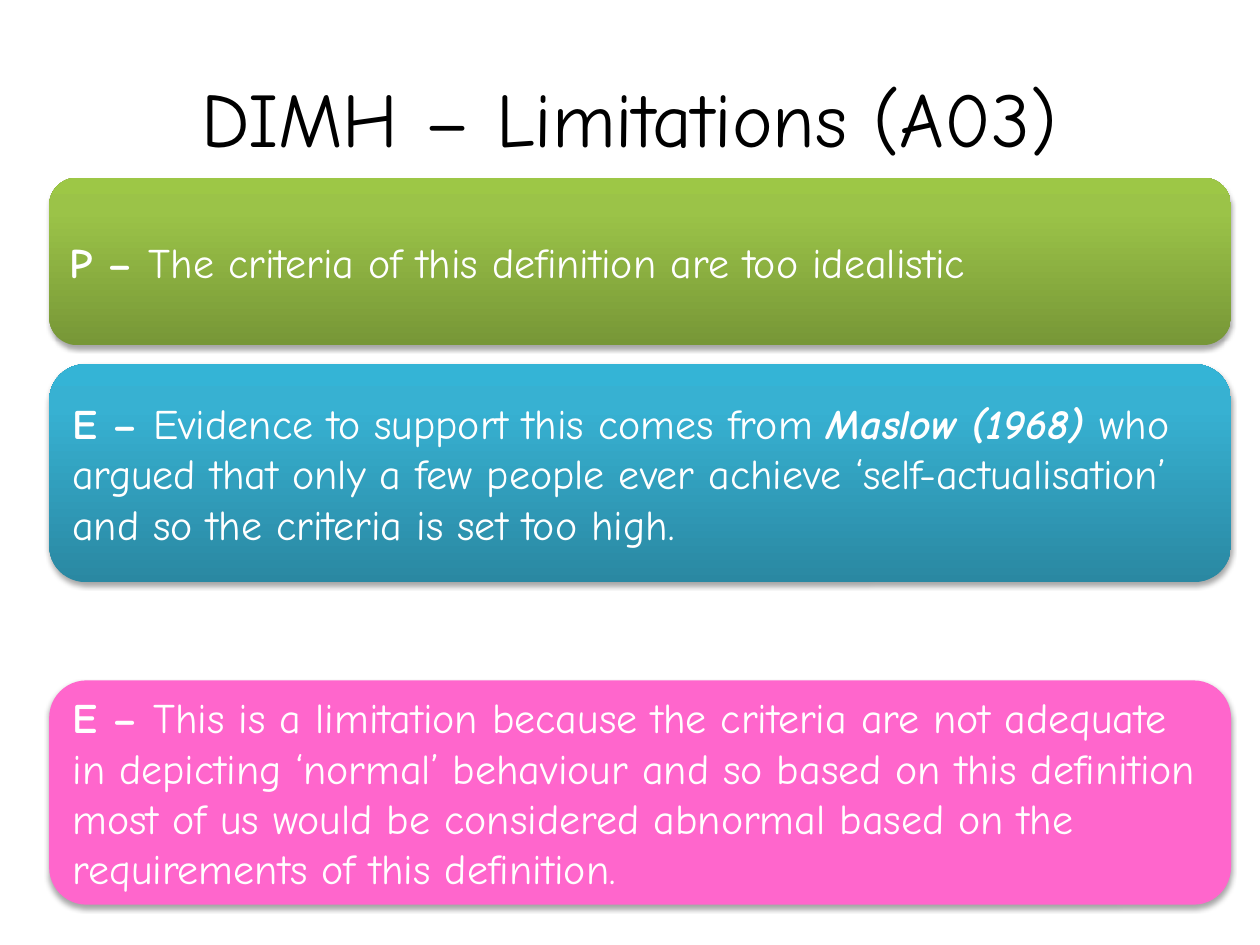
from copy import deepcopy

from lxml.etree import SubElement
from pptx import Presentation
from pptx.dml.color import RGBColor
from pptx.enum.shapes import MSO_SHAPE
from pptx.enum.text import MSO_ANCHOR, PP_ALIGN
from pptx.oxml.ns import qn
from pptx.util import Inches, Pt

FONT = "Comic Neue"
GREEN = [(0, "779737"), (0.8, "9BC348"), (1, "9DC746")]
BLUE = [(0, "2A88A2"), (0.8, "37B1D2"), (1, "34B4D6")]
PINK = [(0, "FF66CC")]

CARDS = [
    (1.41, 1.33, GREEN, [
        ("P – ", True, False),
        ("The criteria of this definition are too idealistic", False, False),
    ]),
    (2.89, 1.73, BLUE, [
        ("E – ", True, False),
        ("Evidence to support this comes from ", False, False),
        ("Maslow (1968) ", True, True),
        ("who argued that only a few people ever achieve ‘self-actualisation’ "
         "and so the criteria is set too high.", False, False),
    ]),
    (5.4, 1.78, PINK, [
        ("E – ", True, False),
        ("This is a limitation because the criteria are not adequate in depicting "
         "‘normal’ behaviour and so based on this definition most of us would be "
         "considered abnormal based on the requirements of this definition.", False, False),
    ]),
]


def color(value):
    """Return the colour for a hex string."""
    return RGBColor.from_string(value)


def format_font(font, size, value, bold=False, italic=False):
    """Set typeface, size, colour and style of a font."""
    font.name = FONT
    font.size = Pt(size)
    font.color.rgb = color(value)
    font.bold = bold
    font.italic = italic


def fill_shape(shape, stops):
    """Fill a shape with one colour, or with a gradient rising from the bottom."""
    if len(stops) == 1:
        shape.fill.solid()
        shape.fill.fore_color.rgb = color(stops[0][1])
        return
    shape.fill.gradient()
    shape.fill.gradient_angle = 90
    stop_list = shape._element.spPr.find(".//" + qn("a:gsLst"))
    while len(stop_list) < len(stops):
        stop_list.append(deepcopy(stop_list[0]))
    for stop, (position, value) in zip(shape.fill.gradient_stops, stops):
        stop.color.rgb = color(value)
        stop.position = position


def add_soft_shadow(shape):
    """Give a shape a soft black shadow just below it."""
    shape.shadow.inherit = False
    effects = shape._element.spPr.find(qn("a:effectLst"))
    shadow = SubElement(effects, qn("a:outerShdw"), blurRad=str(Pt(3.1)),
                        dist=str(Pt(1.8)), dir="5400000", rotWithShape="0")
    shade = SubElement(shadow, qn("a:srgbClr"), val="000000")
    SubElement(shade, qn("a:alpha"), val="35000")


def add_title(slide, left, top, width, height, text):
    """Place the centred heading in its box."""
    frame = slide.shapes.add_textbox(left, top, width, height).text_frame
    frame.word_wrap = True
    frame.vertical_anchor = MSO_ANCHOR.MIDDLE
    frame.text = text
    paragraph = frame.paragraphs[0]
    paragraph.alignment = PP_ALIGN.CENTER
    format_font(paragraph.runs[0].font, 44, "000000")


def add_card(slide, left, top, width, height, stops, parts):
    """Place a rounded card with its styled text runs."""
    shape = slide.shapes.add_shape(MSO_SHAPE.ROUNDED_RECTANGLE, left, top, width, height)
    fill_shape(shape, stops)
    shape.line.fill.background()
    add_soft_shadow(shape)
    frame = shape.text_frame
    frame.word_wrap = True
    frame.vertical_anchor = MSO_ANCHOR.MIDDLE
    paragraph = frame.paragraphs[0]
    paragraph.alignment = PP_ALIGN.LEFT
    for text, bold, italic in parts:
        run = paragraph.add_run()
        run.text = text
        format_font(run.font, 24, "FFFFFF", bold, italic)


def main():
    """Build and save the slide."""
    presentation = Presentation()
    presentation.slide_width = Inches(10)
    presentation.slide_height = Inches(7.5)
    slide = presentation.slides.add_slide(presentation.slide_layouts[6])
    add_title(slide, Inches(0.5), Inches(0.3), Inches(9), Inches(1.25),
              "DIMH – Limitations (A03)")
    for top, height, stops, parts in CARDS:
        add_card(slide, Inches(0.39), Inches(top), Inches(9.38), Inches(height), stops, parts)
    presentation.save("out.pptx")


if __name__ == "__main__":
    main()
